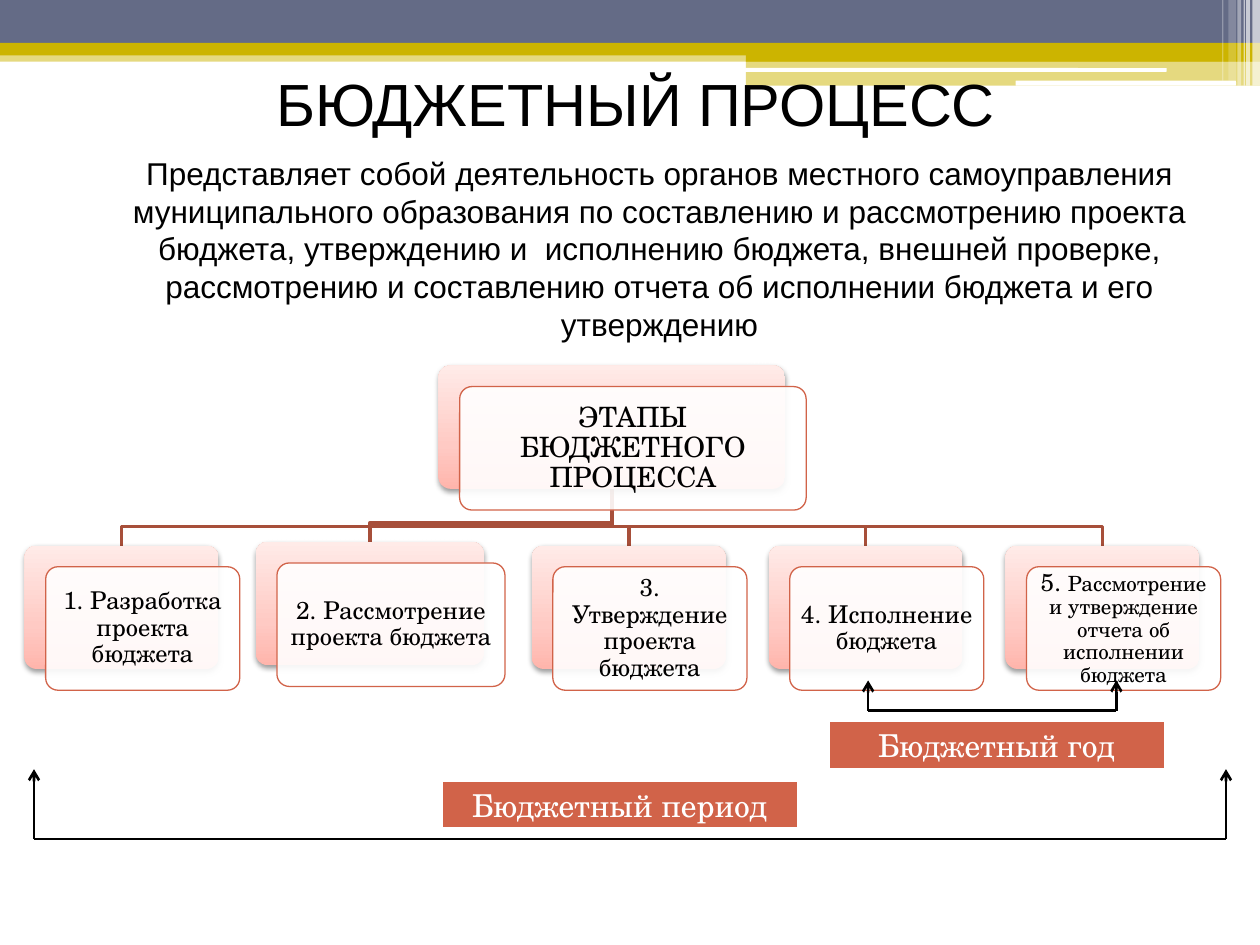
from dataclasses import dataclass
from typing import NamedTuple

from lxml import etree
from pptx import Presentation
from pptx import util as u
from pptx.dml.color import RGBColor
from pptx.enum import shapes, text
from pptx.oxml import parse_xml
from pptx.oxml.ns import nsdecls, qn


@dataclass(frozen=True)
class Theme:
    paper: str = "FFFFFF"
    ink: str = "000000"
    slate: str = "646B86"
    gold: str = "CCB400"
    accent: str = "D16349"
    branch: str = "A74F3A"
    blush: tuple = ((0, "FFB5AC"), (35, "FFCAC4"), (100, "FFEBE8"))
    sans: str = "Arial"
    serif: str = "TeX Gyre Schola"
    title: float = 34
    body: float = 18
    head: float = 16
    stage: float = 14
    small: float = 12


class Box(NamedTuple):
    """Columns and rows of a 100 by 75 grid."""
    left: float
    top: float
    width: float
    height: float


class Bar(NamedTuple):
    box: Box
    color: str
    alpha: int = 100
    rounded: bool = False


class Card(NamedTuple):
    box: Box
    runs: tuple  # (wording, size) pairs
    inset: float


T = Theme()
UNIT = u.Inches(0.1)
CARD_SHIFT = 1.68
CARD_HEIGHT = 9.8
BEND = 1.5  # rows between a branch's bend and the card below it


def g(n: float) -> int:
    return round(n * UNIT)


def place(box: Box) -> list[int]:
    return [g(n) for n in box]


def add_box(slide, box: Box, color=None, alpha=100, adj=None, line=None, weight=0.75):
    kind = shapes.MSO_SHAPE.RECTANGLE if adj is None else shapes.MSO_SHAPE.ROUNDED_RECTANGLE
    sp = slide.shapes.add_shape(kind, *place(box))
    sp.shadow.inherit = False
    if adj is not None:
        sp.adjustments[0] = adj
    if color:
        sp.fill.solid()
        sp.fill.fore_color.rgb = RGBColor.from_string(color)
        if alpha < 100:
            rgb = sp._element.spPr.find(".//" + qn("a:srgbClr"))
            etree.SubElement(rgb, qn("a:alpha")).set("val", str(alpha * 1000))
    if line:
        sp.line.color.rgb = RGBColor.from_string(line)
        sp.line.width = u.Pt(weight)
    else:
        sp.line.fill.background()
    return sp


def write(sp, runs, font: str, color: str, inset=None, spacing=None) -> None:
    tf = sp.text_frame
    tf.word_wrap = True
    tf.vertical_anchor = text.MSO_ANCHOR.MIDDLE
    if inset is not None:
        tf.margin_left = tf.margin_right = tf.margin_top = tf.margin_bottom = g(inset)
    p = tf.paragraphs[0]
    p.alignment = text.PP_ALIGN.CENTER
    p.line_spacing = spacing
    for words, size in runs:
        r = p.add_run()
        r.text = words
        r.font.name, r.font.size = font, u.Pt(size)
        r.font.color.rgb = RGBColor.from_string(color)


def add_card(slide, card: Card) -> None:
    # Shaded plate behind
    plate = add_box(slide, card.box, adj=0.1)
    stops = "".join(f'<a:gs pos="{pos * 1000}"><a:srgbClr val="{c}"/></a:gs>' for pos, c in T.blush)
    props = plate._element.spPr
    props.find(qn("a:prstGeom")).addnext(parse_xml(
        f'<a:gradFill {nsdecls("a")} rotWithShape="1"><a:gsLst>{stops}</a:gsLst>'
        '<a:lin ang="16200000" scaled="0"/></a:gradFill>'))
    props.find(qn("a:effectLst")).append(parse_xml(
        f'<a:outerShdw {nsdecls("a")} blurRad="{u.Pt(3.1)}" dist="{u.Pt(1.6)}" dir="5400000" '
        f'rotWithShape="0"><a:srgbClr val="{T.ink}"><a:alpha val="38000"/></a:srgbClr></a:outerShdw>'))
    # Outlined front with the wording
    front = card.box._replace(left=card.box.left + CARD_SHIFT, top=card.box.top + CARD_SHIFT)
    sp = add_box(slide, front, T.paper, 90, adj=0.1, line=T.accent)
    write(sp, card.runs, T.serif, T.ink, card.inset, 0.9)


def add_branch(slide, parent: Box, child: Box) -> None:
    x0, y0 = parent.left + parent.width / 2, parent.top + parent.height
    x1, y1 = child.left + child.width / 2, child.top
    points = [(x0, y1 - BEND), (x1, y1 - BEND), (x1, y1)]
    builder = slide.shapes.build_freeform(g(x0), g(y0))
    builder.add_line_segments([(g(x), g(y)) for x, y in points], close=False)
    sp = builder.convert_to_shape()
    sp.shadow.inherit = False
    sp.fill.background()
    sp.line.color.rgb = RGBColor.from_string(T.branch)
    sp.line.width = u.Pt(2)


def add_line(slide, start: tuple, end: tuple, arrow: bool = False) -> None:
    c = slide.shapes.add_connector(shapes.MSO_CONNECTOR.STRAIGHT, *map(g, start + end))
    c.line.color.rgb = RGBColor.from_string(T.ink)
    c.line.width = u.Pt(1.5)
    if arrow:
        etree.SubElement(c.line._get_or_add_ln(), qn("a:tailEnd")).set("type", "arrow")
    etree.SubElement(c._element.spPr, qn("a:effectLst"))


def add_bracket(slide, left: float, right: float, base: float, tip: float) -> None:
    add_line(slide, (left, base), (right, base))
    for x in (left, right):
        add_line(slide, (x, base), (x, tip), arrow=True)


BARS = [
    Bar(Box(0, 4, 100, 0.9), T.gold, 50),
    Bar(Box(0, 0, 100, 3.4), T.slate),
    Bar(Box(0, 3.4, 100, 1), T.gold),
    Bar(Box(59.2, 3.9, 40.8, 1), T.gold),
    Bar(Box(59.2, 4.8, 40.8, 2), T.gold, 50),
    Bar(Box(59.1, 5.4, 33.5, 0.3), T.paper, rounded=True),
    Bar(Box(80.6, 6.4, 17.5, 0.4), T.paper, rounded=True),
]
# Thin vertical stripes at the right edge: left, width, height, opacity
STRIPES = [(99.4, 0.6, 6.8, 65), (98.9, 0.3, 6.8, 65), (98.7, 0.1, 6.8, 60),
           (98.2, 0.3, 6.8, 40), (97.5, 0.6, 6.4, 20), (97, 0.1, 6.4, 30)]

ROOT = Card(Box(34.8, 29, 27.5, CARD_HEIGHT), (("ЭТАПЫ БЮДЖЕТНОГО ПРОЦЕССА", T.head),), 0.4)
# Left, top, width, runs
STAGES = [Card(Box(left, top, width, CARD_HEIGHT), runs, 0.3) for left, top, width, runs in [
    (1.95, 43.3, 15.4, (("1. Разработка проекта бюджета", T.stage),)),
    (20.3, 43, 18.1, (("2. Рассмотрение проекта бюджета", T.stage),)),
    (42.2, 43.3, 15.4, (("3. Утверждение проекта бюджета", T.stage),)),
    (61, 43.3, 15.4, (("4. Исполнение бюджета", T.stage),)),
    (79.8, 43.3, 15.4, (("5. ", T.stage),
                        ("Рассмотрение и утверждение отчета об исполнении бюджета", T.small))),
]]
LABELS = [(Box(65.7, 57.2, 26.8, 3.9), "Бюджетный год"),
          (Box(35, 61.9, 28.4, 3.9), "Бюджетный период")]
SUMMARY = ("Представляет собой деятельность органов местного самоуправления муниципального "
           "образования по составлению и рассмотрению проекта бюджета, утверждению и  исполнению "
           "бюджета, внешней проверке, рассмотрению и составлению отчета об исполнении бюджета "
           "и его утверждению")


def main() -> None:
    prs = Presentation()
    prs.slide_width, prs.slide_height = g(100), g(75)
    slide = prs.slides.add_slide(prs.slide_layouts[5])
    slide.background.fill.solid()
    slide.background.fill.fore_color.rgb = RGBColor.from_string(T.paper)

    # Header band
    for bar in BARS:
        add_box(slide, bar.box, bar.color, bar.alpha, adj=0.167 if bar.rounded else None)
    for left, width, height, alpha in STRIPES:
        add_box(slide, Box(left, 0, width, height), T.paper, alpha)

    # Title, brought in front of the band, and summary
    title = slide.shapes.title
    slide.shapes._spTree.append(title._element)
    title.left, title.top, title.width, title.height = place(Box(15, 4.8, 70.9, 6.7))
    write(title, (("БЮДЖЕТНЫЙ ПРОЦЕСС", T.title),), T.sans, T.ink)
    summary = slide.shapes.add_textbox(*place(Box(5.1, 11.6, 94.5, 16.2)))
    write(summary, ((SUMMARY, T.body),), T.sans, T.ink)

    # Stage tree
    for stage in reversed(STAGES):
        add_branch(slide, ROOT.box, stage.box)
    for card in [ROOT, *STAGES]:
        add_card(slide, card)

    # Budget year and budget period
    for box, words in LABELS:
        sp = add_box(slide, box, T.accent, line=T.paper, weight=2)
        write(sp, ((words, T.body),), T.serif, T.paper)
    add_bracket(slide, 2.7, 97.3, 66.6, 61.05)
    add_bracket(slide, 68.9, 88.6, 56.4, 54)

    prs.save("out.pptx")


if __name__ == "__main__":
    main()
